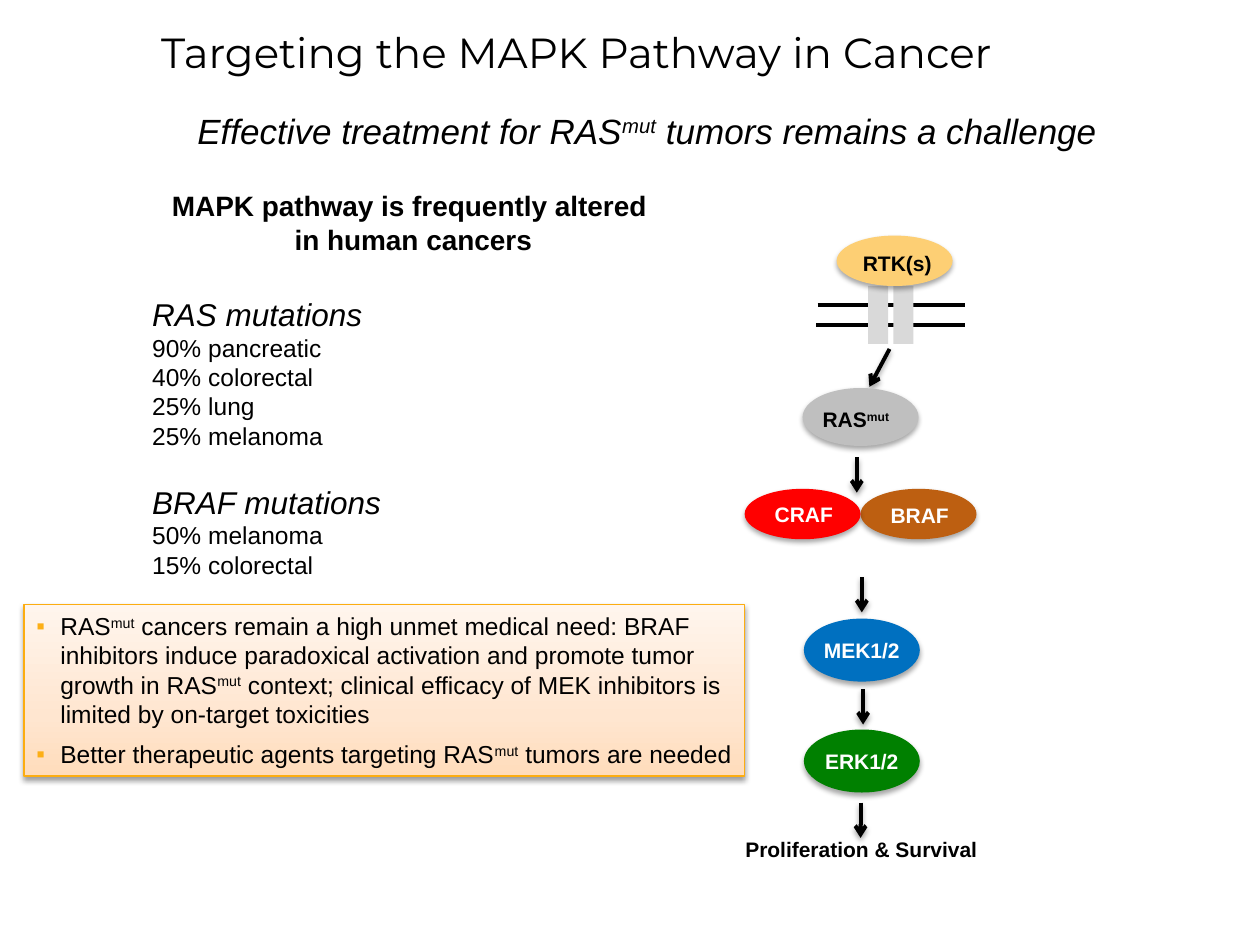
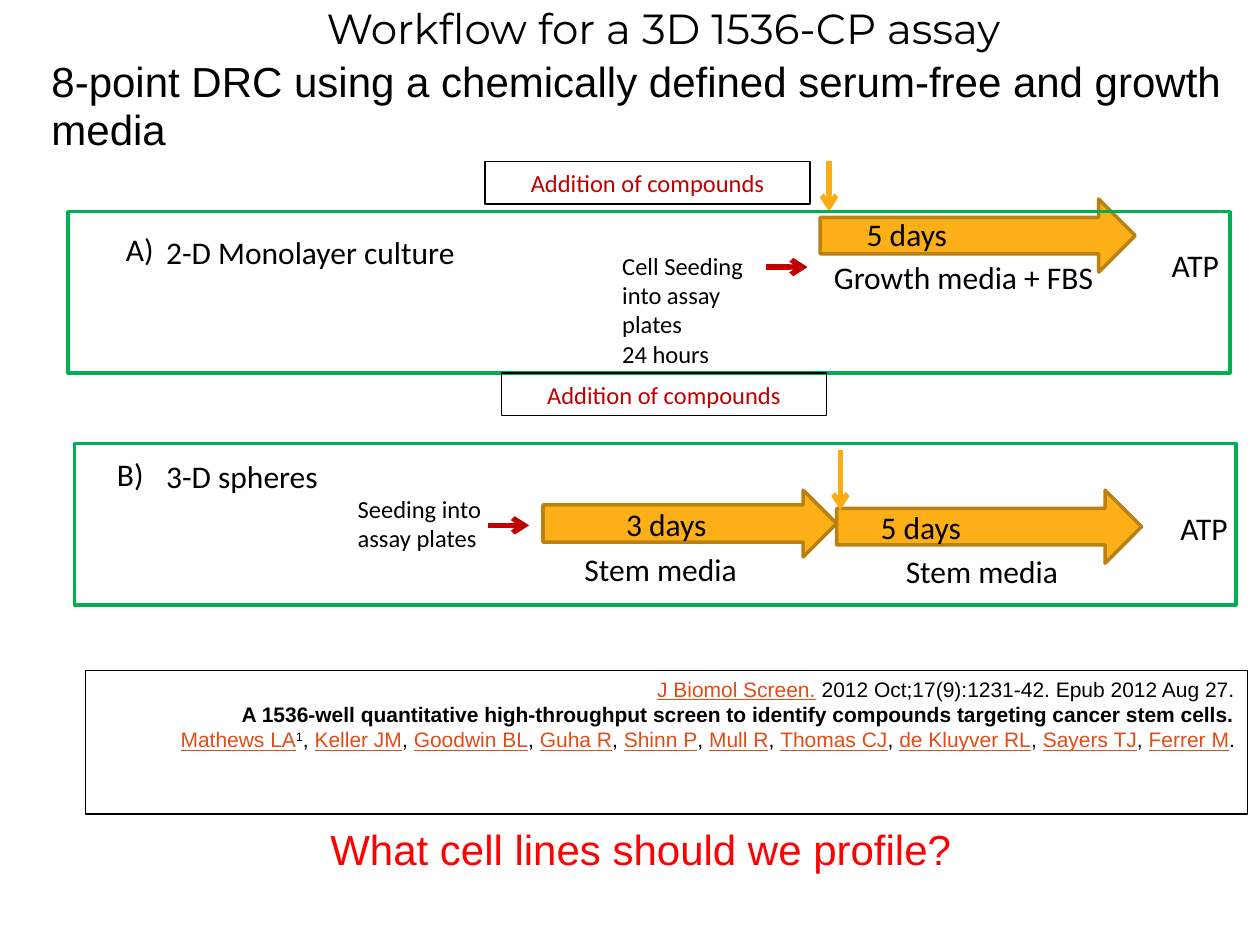
from copy import deepcopy
from pptx import Presentation
from pptx.dml.color import RGBColor
from pptx.enum import shapes as sh, text as tx
from pptx.oxml.ns import qn
from pptx.util import Inches, Pt
from lxml import etree

HUES = {
    "black": "000000", "white": "FFFFFF", "red": "FF0000", "wine": "C00000",
    "green": "008000", "frame": "00B050", "blue": "0070C0", "brown": "BD5F11",
    "gold": "FCAF17", "amber": "FCAD11", "ochre": "BA8111", "sand": "FDCF74",
    "grey": "BFBFBF", "pale": "D9D9D9", "link": "E44C16",
}
BLUSH = [(0, "FFDCBB"), (0.35, "FFE6D0"), (1, "FFF5ED")]
KIND = sh.MSO_SHAPE
MID = tx.PP_ALIGN.CENTER
RIGHT = tx.PP_ALIGN.RIGHT
TOP = tx.MSO_ANCHOR.TOP


def hue(name):
    return RGBColor.from_string(HUES[name])


def sub(node, tag, **attrs):
    child = etree.SubElement(node, qn(tag))
    for key, val in attrs.items():
        child.set(key, str(val))
    return child


def write(para, words, size, font="Calibri", color="black", bold=False,
          slant=False, align=None, lead=None, before=0):
    """Runs are parted by |; a leading ^ raises a run, a leading _ marks a link."""
    para.alignment = align
    para.line_spacing = lead
    para.space_before = Pt(before)
    for part in words.split("|"):
        mark = part[0] if part[0] in "^_" else ""
        run = para.add_run()
        run.text = part[len(mark):]
        face = run.font
        face.size, face.name = Pt(size), font
        face.bold, face.italic = bold, slant
        face.color.rgb = hue("link" if mark == "_" else color)
        if mark == "_":
            face.underline = True
        elif mark == "^":
            run._r.get_or_add_rPr().set("baseline", "30000")


def fill_in(frame, lines, **style):
    """Each line is a string, or a (string, style changes) pair."""
    for num, line in enumerate(lines):
        para = frame.paragraphs[0] if num == 0 else frame.add_paragraph()
        words, extra = (line, {}) if isinstance(line, str) else line
        write(para, words, **{**style, **extra})


def label(slide, at, *lines, wrap=True, anchor=TOP, **style):
    box = slide.shapes.add_textbox(*map(Inches, at))
    box.text_frame.word_wrap = wrap
    box.text_frame.vertical_anchor = anchor
    fill_in(box.text_frame, lines, **style)


def title(slide, at, words, align=None):
    label(slide, at, words, size=24, font="Montserrat", align=align, lead=0.95)


def cast(effects, alpha=35):
    """Soft shadow falling straight down."""
    outer = sub(effects, "a:outerShdw", blurRad=Pt(3.1), dist=Pt(1.8),
                dir=5400000, rotWithShape=0)
    tint = sub(outer, "a:srgbClr", val=HUES["black"])
    sub(tint, "a:alpha", val=alpha * 1000)


def block(slide, kind, at, fill=None, edge=None, width=0.75, shade=0):
    item = slide.shapes.add_shape(kind, *map(Inches, at))
    item.shadow.inherit = False
    if fill:
        item.fill.solid()
        item.fill.fore_color.rgb = hue(fill)
    else:
        item.fill.background()
    if edge:
        item.line.color.rgb = hue(edge)
        item.line.width = Pt(width)
    else:
        item.line.fill.background()
    if shade:
        cast(item._element.spPr.find(qn("a:effectLst")), shade)
    return item


def line(slide, start, end, color="black", width=2.25, head=True, shade=False):
    item = slide.shapes.add_connector(sh.MSO_CONNECTOR.STRAIGHT,
                                      *map(Inches, start + end))
    item.line.color.rgb = hue(color)
    item.line.width = Pt(width)
    if head:
        sub(item.line._get_or_add_ln(), "a:tailEnd", type="arrow")
    effects = sub(item._element.spPr, "a:effectLst")
    if shade:
        cast(effects)


def panel(slide, at, *lines, anchor=tx.MSO_ANCHOR.MIDDLE, **style):
    item = block(slide, KIND.RECTANGLE, at, edge="black")
    item.text_frame.word_wrap = True
    item.text_frame.vertical_anchor = anchor
    fill_in(item.text_frame, lines, **style)


def node(slide, words, at, spot, fill, color="white"):
    """Shaded oval of the pathway, with its name."""
    block(slide, KIND.OVAL, at, fill, shade=35)
    label(slide, spot + (0.8, 0.3), words, wrap=False, size=12, font="Arial",
          color=color, bold=True)


def callout(slide, at, *points):
    """Blush box with square bullets."""
    item = block(slide, KIND.RECTANGLE, at, edge="amber", shade=38)
    item.fill.gradient()
    item.fill.gradient_angle = 90
    stops = item._element.spPr.find(".//" + qn("a:gsLst"))
    stops.append(deepcopy(stops[0]))
    for stop, (pos, tint) in zip(item.fill.gradient_stops, BLUSH):
        stop.position = pos
        stop.color.rgb = RGBColor.from_string(tint)
    frame = item.text_frame
    frame.word_wrap = True
    frame.vertical_anchor = TOP
    fill_in(frame, points, size=14, font="Arial", align=tx.PP_ALIGN.LEFT)
    for num, para in enumerate(frame.paragraphs):
        para.space_before = Pt(6 if num else 0)
        props = para._p.get_or_add_pPr()
        props.set("marL", str(Inches(0.19)))
        props.set("indent", str(-Inches(0.19)))
        sub(sub(props, "a:buClr"), "a:srgbClr", val=HUES["gold"])
        sub(props, "a:buFont", typeface="Arial")
        sub(props, "a:buChar", char="▪")


def stage(slide, at, days, spot, media, below, adj=0.5):
    """Block arrow for a culture period, its length and its medium."""
    item = block(slide, KIND.RIGHT_ARROW, at, "gold", "ochre", 2)
    item.adjustments[0] = adj
    label(slide, spot + (0.85, 0.4), days, wrap=False, size=18)
    label(slide, below + (0.4,), media, wrap=False, size=18)


def pathway(slide):
    title(slide, (1.18, 0.19, 9.1, 0.54), "Targeting the MAPK Pathway in Cancer")
    label(slide, (0.59, 0.86, 9.09, 0.4),
          "Effective treatment for RAS|^mut| tumors remains a challenge",
          anchor=tx.MSO_ANCHOR.BOTTOM, size=20, font="Arial", slant=True,
          align=MID, lead=0.95)

    # Mutation rates
    label(slide, (0.19, 1.45, 6.18, 0.64),
          "MAPK pathway is frequently altered ", "in human cancers",
          size=16, font="Arial", bold=True, align=MID)
    head = {"size": 18, "slant": True}
    label(slide, (1.11, 2.29, 2.28, 2.39),
          ("RAS mutations", head), "90% pancreatic", "40% colorectal",
          "25% lung", "25% melanoma",
          ("BRAF mutations", {**head, "before": 18.5}),
          "50% melanoma", "15% colorectal", size=14, font="Arial")

    # Membrane and receptor
    for left, y in ((6.49, 2.42), (6.48, 2.58)):
        line(slide, (left, y), (7.66, y), head=False)
    for x in (6.89, 7.09):
        block(slide, KIND.RECTANGLE, (x, 2.27, 0.16, 0.46), "pale")
    line(slide, (7.06, 2.77), (6.9, 3.07), shade=True)

    # Kinase cascade
    for words, at, spot, *tints in (
        ("RTK(s)", (6.64, 1.87, 0.92, 0.4), (6.75, 1.94), "sand", "black"),
        ("RAS|^mut", (6.37, 3.08, 0.92, 0.46), (6.43, 3.18), "grey", "black"),
        ("BRAF", (6.83, 3.88, 0.92, 0.4), (6.97, 3.94), "brown"),
        ("CRAF", (5.91, 3.88, 0.92, 0.4), (6.05, 3.93), "red"),
        ("MEK1/2", (6.38, 4.91, 0.92, 0.5), (6.44, 5.01), "blue"),
        ("ERK1/2", (6.38, 5.79, 0.92, 0.5), (6.45, 5.89), "green"),
    ):
        node(slide, words, at, spot, *tints)
    for x, y in ((6.8, 3.63), (6.84, 4.58), (6.85, 5.47), (6.83, 6.37)):
        line(slide, (x, y), (x, y + 0.28), shade=True)
    label(slide, (5.73, 6.59, 2.26, 0.3), "Proliferation & Survival ",
          size=12, font="Arial", bold=True, align=MID)

    callout(slide, (0.19, 4.8, 5.72, 1.36),
            "RAS|^mut| cancers remain a high unmet medical need: BRAF inhibitors "
            "induce paradoxical activation and promote tumor growth in RAS|^mut"
            "| context; clinical efficacy of MEK inhibitors is limited by "
            "on-target toxicities",
            "Better therapeutic agents targeting RAS|^mut| tumors are needed")


def assay(slide):
    title(slide, (1.21, 0, 8.11, 0.77), "Workflow for a 3D 1536-CP assay", MID)
    label(slide, (0.31, 0.42, 9.69, 0.6),
          "8-point DRC using a chemically defined serum-free and growth media",
          size=24, font="Arial", lead=0.95)

    # Culture periods
    stage(slide, (6.51, 1.58, 2.5, 0.58), "5 days", (6.78, 1.66),
          "Growth media + FBS", (6.52, 2, 2.28))
    stage(slide, (4.31, 3.89, 2.33, 0.53), "3 days", (4.87, 3.96),
          "Stem media", (4.54, 4.32, 1.51), 0.56)
    stage(slide, (6.64, 3.89, 2.42, 0.58), "5 days", (6.89, 3.98),
          "Stem media", (7.09, 4.33, 1.51))

    # Seeding and dosing
    label(slide, (4.84, 1.94, 1.17, 1.04),
          "Cell Seeding into assay plates", "24 hours", size=14)
    label(slide, (2.74, 3.87, 1.22, 0.57), "Seeding into assay plates", size=14)
    for x, y in ((6.08, 2.12), (3.87, 4.17)):
        line(slide, (x, y), (x + 0.33, y), "wine", 3)
    for x, y, end in ((6.58, 1.28, 1.68), (6.67, 3.57, 4.05)):
        line(slide, (x, y), (x, end), "amber", 3)

    # Row names and readout
    for words, x, y, wide in (
        ("A)", 0.9, 1.78, 0.42), ("2-D Monolayer culture", 1.22, 1.8, 2.58),
        ("ATP", 9.2, 1.9, 0.61), ("B)", 0.83, 3.56, 0.46),
        ("3-D spheres", 1.22, 3.58, 2.13), ("ATP", 9.27, 3.99, 0.61),
    ):
        label(slide, (x, y, wide, 0.4), words, wrap=False, size=18)

    # Frames
    for x, y in ((0.54, 1.68), (0.59, 3.52)):
        block(slide, KIND.RECTANGLE, (x, y, 9.22, 1.28), edge="frame", width=2)
    for x, y in ((3.85, 1.28), (3.98, 2.96)):
        panel(slide, (x, y, 2.58, 0.34), "Addition of compounds",
              size=14, color="wine", align=MID)

    # Citation and question
    peers = ("Keller JM", "Goodwin BL", "Guha R", "Shinn P", "Mull R",
             "Thomas CJ", "de Kluyver RL", "Sayers TJ", "Ferrer M")
    panel(slide, (0.68, 5.32, 9.22, 1.14),
          "_J Biomol Screen.| 2012 Oct;17(9):1231-42. Epub 2012 Aug 27.",
          ("A 1536-well quantitative high-throughput screen to identify "
           "compounds targeting cancer stem cells.", {"bold": True}),
          "_Mathews LA|^1" + "".join("|, |_" + name for name in peers) + "|.",
          anchor=TOP, size=12, font="Arial", align=RIGHT)
    label(slide, (0.54, 6.49, 9.09, 0.5), "What cell lines should we profile?",
          size=24, font="Arial", color="red", align=MID)


def main():
    deck = Presentation()
    deck.slide_width, deck.slide_height = Inches(10), Inches(7.5)
    for draw in (pathway, assay):
        draw(deck.slides.add_slide(deck.slide_layouts[6]))
    deck.save("out.pptx")


if __name__ == "__main__":
    main()
